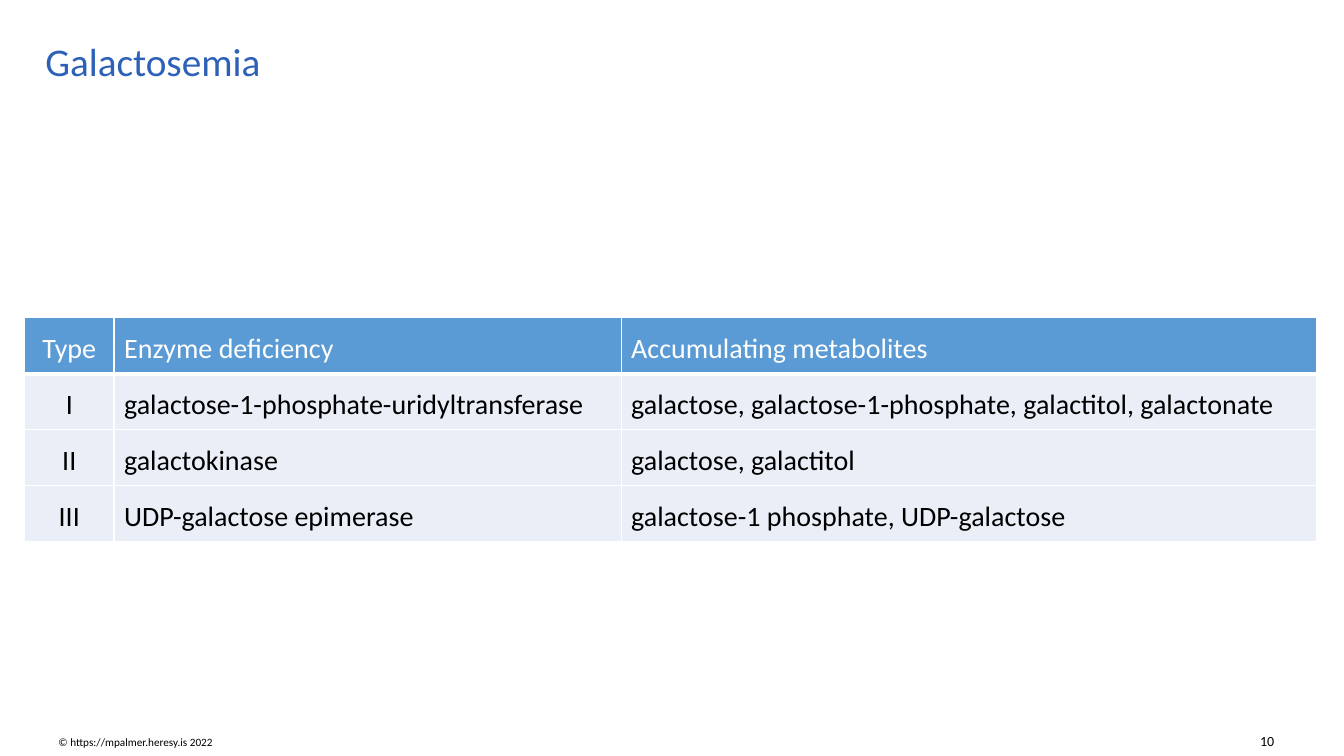
from dataclasses import dataclass

from lxml import etree
from pptx import Presentation
from pptx.dml.color import RGBColor
from pptx.enum.text import MSO_ANCHOR, PP_ALIGN
from pptx.oxml.ns import qn
from pptx.util import Pt

LEFT, CENTER, RIGHT = PP_ALIGN.LEFT, PP_ALIGN.CENTER, PP_ALIGN.RIGHT
MIDDLE, BOTTOM = MSO_ANCHOR.MIDDLE, MSO_ANCHOR.BOTTOM
FONT = "Calibri"
BLACK, WHITE = "000000", "FFFFFF"
TITLE_BLUE, HEADER_BLUE, ROW_BLUE = "2D61B7", "5B9BD5", "EAEFF7"
ROW_HEIGHT = 36


@dataclass
class Column:
    width: float
    align: PP_ALIGN
    heading: str
    entries: list[str]


@dataclass
class FooterNote:
    left: float
    top: float
    width: float
    height: float
    text: str
    size: float
    align: PP_ALIGN


COLUMNS = [
    Column(64, CENTER, "Type", ["I", "II", "III"]),
    Column(362.2, LEFT, "Enzyme deficiency", [
        "galactose-1-phosphate-uridyltransferase",
        "galactokinase",
        "UDP-galactose epimerase",
    ]),
    Column(496.8, LEFT, "Accumulating metabolites", [
        "galactose, galactose-1-phosphate, galactitol, galactonate",
        "galactose, galactitol",
        "galactose-1 phosphate, UDP-galactose",
    ]),
]
FOOTER_NOTES = [
    FooterNote(34.6, 522, 226, 16.6, "© https://mpalmer.heresy.is 2022", 8, LEFT),
    FooterNote(866.9, 519.1, 50.4, 19.4, "10", 10, RIGHT),
]


def rgb(hex_color: str) -> RGBColor:
    return RGBColor.from_string(hex_color)


def write(frame, text: str, *, size: float, color: str = BLACK,
          align: PP_ALIGN = LEFT, line_spacing: float = 1.0) -> None:
    paragraph = frame.paragraphs[0]
    paragraph.alignment = align
    paragraph.line_spacing = line_spacing
    run = paragraph.add_run()
    run.text = text
    run.font.name = FONT
    run.font.size = Pt(size)
    run.font.bold = False
    run.font.color.rgb = rgb(color)


def add_borders(cell, bottom_width: float) -> None:
    """Give a cell white borders; call before its fill is set."""
    properties = cell._tc.get_or_add_tcPr()
    for tag, width in (("a:lnL", 1), ("a:lnR", 1), ("a:lnT", 1), ("a:lnB", bottom_width)):
        line = etree.SubElement(properties, qn(tag), w=str(Pt(width)))
        fill = etree.SubElement(line, qn("a:solidFill"))
        etree.SubElement(fill, qn("a:srgbClr"), val=WHITE)


def fill_cell(cell, text: str, align: PP_ALIGN, is_header: bool) -> None:
    cell.margin_left = cell.margin_right = Pt(7.2)
    cell.margin_top, cell.margin_bottom = Pt(10), Pt(6)
    add_borders(cell, bottom_width=3 if is_header else 1)
    cell.fill.solid()
    cell.fill.fore_color.rgb = rgb(HEADER_BLUE if is_header else ROW_BLUE)
    write(cell.text_frame, text, size=20, align=align,
          color=WHITE if is_header else BLACK)


def add_deficiency_table(slide) -> None:
    row_count = 1 + len(COLUMNS[0].entries)
    table = slide.shapes.add_table(
        row_count, len(COLUMNS), Pt(17.5), Pt(227),
        Pt(sum(column.width for column in COLUMNS)), Pt(ROW_HEIGHT * row_count),
    ).table
    table.horz_banding = False
    for row in table.rows:
        row.height = Pt(ROW_HEIGHT)
    for c, column in enumerate(COLUMNS):
        table.columns[c].width = Pt(column.width)
        for r, text in enumerate([column.heading, *column.entries]):
            fill_cell(table.cell(r, c), text, column.align, is_header=r == 0)


def add_footer_note(slide, note: FooterNote) -> None:
    frame = slide.shapes.add_textbox(
        Pt(note.left), Pt(note.top), Pt(note.width), Pt(note.height)).text_frame
    frame.word_wrap = True
    frame.vertical_anchor = BOTTOM
    write(frame, note.text, size=note.size, align=note.align)


def add_title(slide, text: str) -> None:
    title = slide.shapes.title
    title.left, title.top, title.width, title.height = Pt(25.2), Pt(17.3), Pt(914.4), Pt(56.2)
    title.text_frame.vertical_anchor = MIDDLE
    write(title.text_frame, text, size=28, color=TITLE_BLUE, line_spacing=0.9)


def main() -> None:
    presentation = Presentation()
    presentation.slide_width, presentation.slide_height = Pt(960), Pt(540)
    title_only = presentation.slide_layouts.get_by_name("Title Only")
    slide = presentation.slides.add_slide(title_only)
    for note in FOOTER_NOTES:
        add_footer_note(slide, note)
    add_title(slide, "Galactosemia")
    add_deficiency_table(slide)
    presentation.save("out.pptx")


if __name__ == "__main__":
    main()
